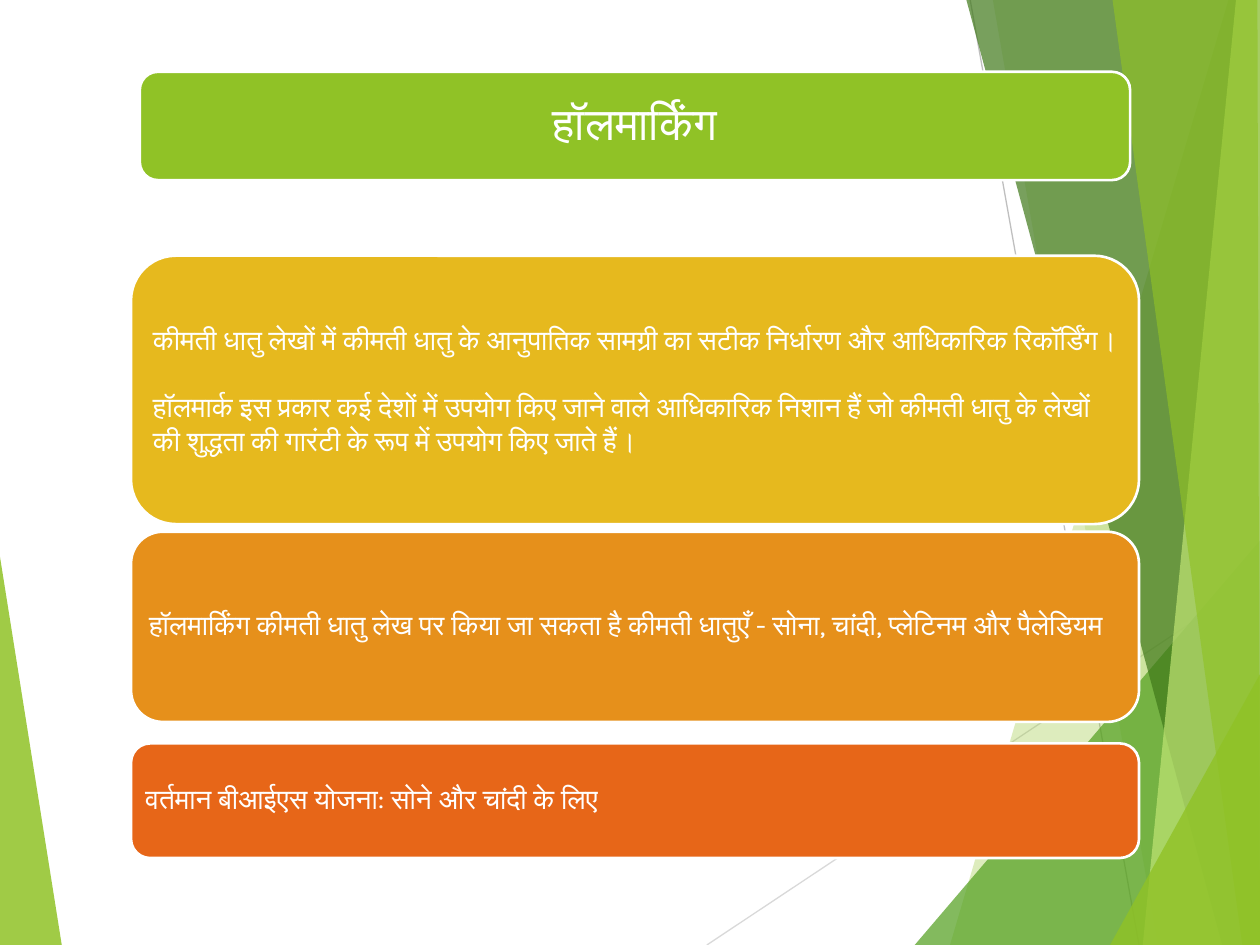
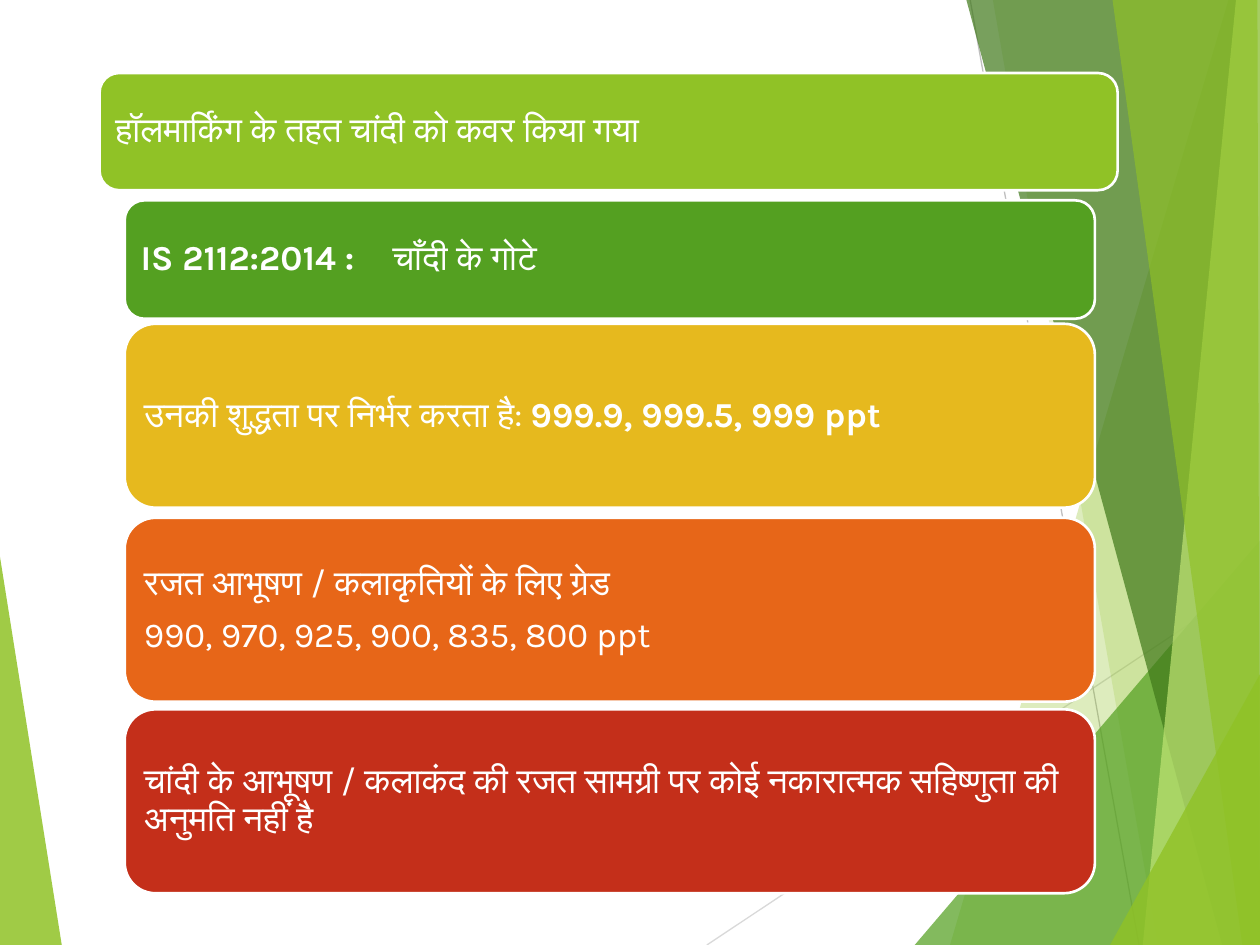
from lxml.etree import SubElement
from pptx import Presentation
from pptx.dml.color import RGBColor
from pptx.enum.shapes import MSO_CONNECTOR as Connector, MSO_SHAPE as Shape
from pptx.enum.text import MSO_ANCHOR as Anchor, PP_ALIGN as Align
from pptx.oxml.ns import qn
from pptx.util import Inches, Pt

# Grid of 100 columns by 75 rows
COLUMNS, ROWS = 100, 75
CELL = Inches(0.1)
FONT = "Karla"
WHITE, LIME, GREEN = "FFFFFF", "90C226", "54A021"
GOLD, AMBER, ORANGE, RED = "E6B91E", "E6901B", "E76618", "C42F1A"


def paint(fill, color, opacity=100):
    fill.solid()
    fill.fore_color.rgb = RGBColor.from_string(color)
    if opacity < 100:
        tint = fill._xPr.find(qn("a:solidFill"))[0]
        SubElement(tint, qn("a:alpha")).set("val", str(opacity * 1000))


def write(frame, paragraphs, size=16, align=Align.LEFT, inset=0.7, spacing=0.9, after=0.4):
    """Fill a frame; each paragraph is a list of (text, bold) runs."""
    frame.word_wrap = True
    frame.vertical_anchor = Anchor.MIDDLE
    frame.margin_left = frame.margin_right = int(inset * CELL)
    frame.margin_top = frame.margin_bottom = int(inset * CELL)
    for index, runs in enumerate(paragraphs):
        paragraph = frame.add_paragraph() if index else frame.paragraphs[0]
        paragraph.alignment = align
        paragraph.line_spacing = spacing
        paragraph.space_after = Pt(round(after * size))
        for text, bold in runs:
            run = paragraph.add_run()
            run.text = text
            run.font.size, run.font.bold, run.font.name = Pt(size), bold, FONT
            paint(run.font.fill, WHITE)
            for script in ("a:ea", "a:cs"):
                SubElement(run.font._element, qn(script)).set("typeface", FONT)


# Background: (colour, opacity, corners), and thin rules drawn after the left wedge
left_wedge = (LIME, 85, [(0, 44.2), (4.9, ROWS), (0, ROWS)])
facets = [
    (LIME, 30, [(97.5, 0), (75.4, ROWS), (COLUMNS, ROWS), (COLUMNS, 0)]),
    (LIME, 20, [(78.8, 0), (91.9, ROWS), (COLUMNS, ROWS), (COLUMNS, 0)]),
    (GREEN, 72, [(72.6, ROWS), (COLUMNS, 42.9), (COLUMNS, ROWS)]),
    ("3F7819", 70, [(76.7, 0), (97, ROWS), (COLUMNS, ROWS), (COLUMNS, 0)]),
    ("C0E474", 70, [(98.1, 0), (90.7, ROWS), (COLUMNS, ROWS), (COLUMNS, 0)]),
    (LIME, 65, [(88.3, 0), (98.6, ROWS), (COLUMNS, ROWS), (99.8, 0)]),
    (LIME, 80, [(88.1, ROWS), (COLUMNS, 53.5), (COLUMNS, ROWS)]),
]
rules = [("D9D9D9", (56.1, ROWS, COLUMNS, 45.8)), ("BFBFBF", (77, 0, 90.4, ROWS))]

# Cards: (left, top, width, height), colour, paragraphs, text format
hallmarking = [
    ((11.1, 5.7, 78.6, 8.6), LIME, [[("हॉलमार्किंग", False)]],
     dict(size=26, align=Align.CENTER, inset=1.1)),
    ((10.4, 20.3, 80, 21.3), GOLD, [
        [("कीमती धातु लेखों में कीमती धातु के आनुपातिक सामग्री का सटीक निर्धारण और आधिकारिक रिकॉर्डिंग।", False)],
        [("हॉलमार्क इस प्रकार कई देशों में उपयोग किए जाने वाले आधिकारिक निशान हैं जो कीमती धातु के लेखों "
          "की शुद्धता की गारंटी के रूप में उपयोग किए जाते हैं।", False)],
    ], dict(spacing=1, after=1.2)),
    ((10.4, 42.2, 80, 15.1), AMBER,
     [[("हॉलमार्किंग कीमती धातु लेख पर किया जा सकता है कीमती धातुएँ - सोना, चांदी, प्लेटिनम और पैलेडियम", False)]], {}),
    ((10.4, 59, 80, 9.1), ORANGE, [[("वर्तमान बीआईएस योजना: सोने और चांदी के लिए", False)]], {}),
]
silver_format = dict(size=20, inset=0.8)
silver = [
    ((7.9, 5.8, 80.8, 9.3), LIME, [[("हॉलमार्किंग के तहत चांदी को कवर किया गया", False)]], silver_format),
    ((9.9, 15.9, 77, 9.4), GREEN, [[("IS 2112:2014 : \t", True), ("चाँदी के गोटे", False)]], silver_format),
    ((9.9, 25.7, 77, 14.6), GOLD,
     [[("उनकी शुद्धता पर निर्भर करता है: ", False), ("999.9, 999.5, 999 ppt", True)]], silver_format),
    ((9.9, 41.1, 77, 14.6), ORANGE,
     [[("रजत आभूषण / कलाकृतियों के लिए ग्रेड", False)], [("990, 970, 925, 900, 835, 800 ppt", False)]], silver_format),
    ((9.9, 56.3, 77, 14.6), RED,
     [[("चांदी के आभूषण / कलाकंद की रजत सामग्री पर कोई नकारात्मक सहिष्णुता की अनुमति नहीं है", False)]],
     silver_format),
]

deck = Presentation()
deck.slide_width, deck.slide_height = COLUMNS * CELL, ROWS * CELL

for cards in (hallmarking, silver):
    slide = deck.slides.add_slide(deck.slide_layouts[6])
    shapes = slide.shapes

    for color, opacity, corners in [left_wedge] + facets:
        points = [(int(x * CELL), int(y * CELL)) for x, y in corners]
        outline = shapes.build_freeform(*points[0])
        outline.add_line_segments(points[1:], close=True)
        facet = outline.convert_to_shape()
        facet.shadow.inherit = False
        facet.line.fill.background()
        paint(facet.fill, color, opacity)
        if corners is left_wedge[2]:
            for rule_color, ends in rules:
                rule = shapes.add_connector(Connector.STRAIGHT, *(int(end * CELL) for end in ends))
                rule.line.width = Pt(0.75)
                paint(rule.line.fill, rule_color)
                SubElement(rule._element.spPr, qn("a:effectLst"))

    for box, color, paragraphs, text_format in cards:
        card = shapes.add_shape(Shape.ROUNDED_RECTANGLE, *(int(length * CELL) for length in box))
        card.shadow.inherit = False
        card.line.width = Pt(1.5)
        paint(card.line.fill, WHITE)
        paint(card.fill, color)
        write(card.text_frame, paragraphs, **text_format)

deck.save("out.pptx")
